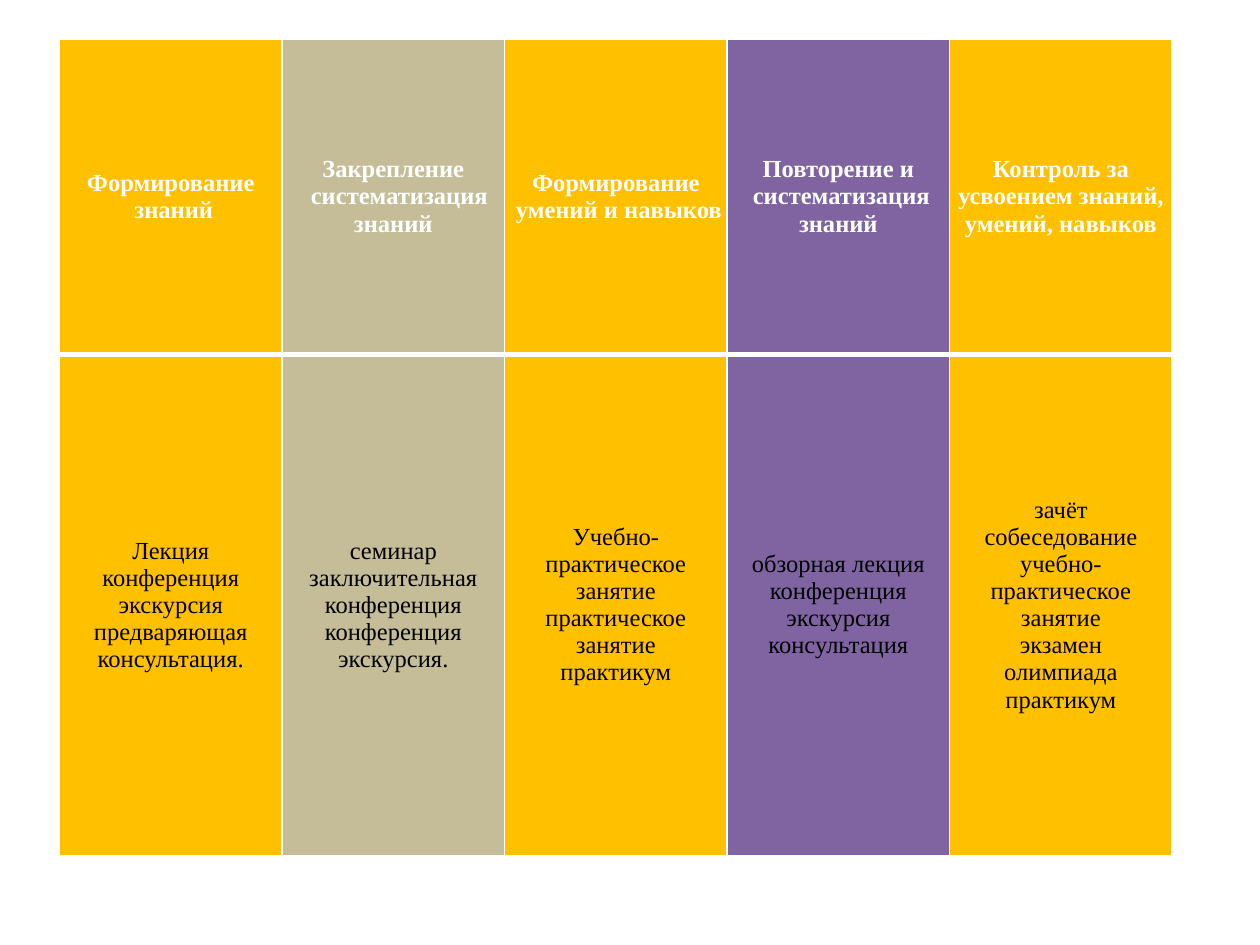
from lxml import etree
from pptx import Presentation
from pptx.dml.color import RGBColor
from pptx.enum.text import MSO_ANCHOR, PP_ALIGN
from pptx.oxml.ns import qn
from pptx.util import Cm, Pt

MIDDLE = MSO_ANCHOR.MIDDLE
CENTER = PP_ALIGN.CENTER

COLORS = {
    "amber": "FFC000",
    "sand": "C4BD97",
    "violet": "8064A2",
    "white": "FFFFFF",
    "black": "000000",
}
FONT = "Times New Roman"
INDENT_STEP = Pt(3.5)
THIN, THICK = Pt(1), Pt(3)

# Each column: fill, indent steps of the second heading line, heading, forms of lesson
COLUMNS = [
    ("amber", 1, ["Формирование", "знаний"],
     ["Лекция", "конференция", "экскурсия", "предваряющая консультация."]),
    ("sand", 2, ["Закрепление", "систематизация знаний"],
     ["семинар", "заключительная конференция", "конференция", "экскурсия."]),
    ("amber", 1, ["Формирование", "умений и навыков"],
     ["Учебно-практическое занятие", "практическое занятие", "практикум"]),
    ("violet", 1, ["Повторение и", "систематизация знаний"],
     ["обзорная лекция", "конференция", "экскурсия", "консультация"]),
    ("amber", 0, ["Контроль за усвоением знаний, умений, навыков"],
     ["зачёт", "собеседование", "учебно-практическое занятие",
      "экзамен", "олимпиада", "практикум"]),
]


def rgb(name):
    return RGBColor.from_string(COLORS[name])


def set_borders(cell, top, bottom):
    """Draw white cell borders; the side borders are thin."""
    properties = cell._tc.get_or_add_tcPr()
    widths = {"a:lnL": THIN, "a:lnR": THIN, "a:lnT": top, "a:lnB": bottom}
    for tag, width in widths.items():
        line = etree.SubElement(properties, qn(tag), w=str(int(width)))
        fill = etree.SubElement(line, qn("a:solidFill"))
        etree.SubElement(fill, qn("a:srgbClr"), val=COLORS["white"])


def fill_cell(cell, lines, fill, is_heading, indent_steps=0):
    # Borders come before the fill in the cell's XML
    set_borders(cell, THIN if is_heading else THICK, THICK if is_heading else THIN)
    cell.fill.solid()
    cell.fill.fore_color.rgb = rgb(fill)
    cell.vertical_anchor = MIDDLE
    cell.margin_left = cell.margin_right = Cm(0.03)
    cell.margin_top = cell.margin_bottom = Cm(0.03)

    frame = cell.text_frame
    frame.text = "\n".join(lines)
    for number, para in enumerate(frame.paragraphs):
        para.alignment = CENTER
        para.font.name = FONT
        para.font.size = Pt(14)
        para.font.bold = is_heading
        para.font.color.rgb = rgb("white" if is_heading else "black")
        if number == 1 and indent_steps:
            para._p.get_or_add_pPr().set("indent", str(int(INDENT_STEP * indent_steps)))


def add_lesson_table(page, left, top, width, row_heights):
    """Table of learning stages with the lesson forms below them."""
    box = page.shapes.add_table(
        len(row_heights), len(COLUMNS), left, top, width, sum(row_heights))
    table = box.table
    for row, height in zip(table.rows, row_heights):
        row.height = height
    for index, (fill, indent_steps, heading, forms) in enumerate(COLUMNS):
        table.columns[index].width = int(width / len(COLUMNS))
        fill_cell(table.cell(0, index), heading, fill, True, indent_steps)
        fill_cell(table.cell(1, index), forms, fill, False)


def main():
    deck = Presentation()
    deck.slide_width, deck.slide_height = Cm(25.4), Cm(19.05)
    page = deck.slides.add_slide(deck.slide_layouts[6])
    add_lesson_table(page, Cm(1.2), Cm(0.79), Cm(22.43), [Cm(6.35), Cm(10.11)])
    deck.save("out.pptx")


if __name__ == "__main__":
    main()
